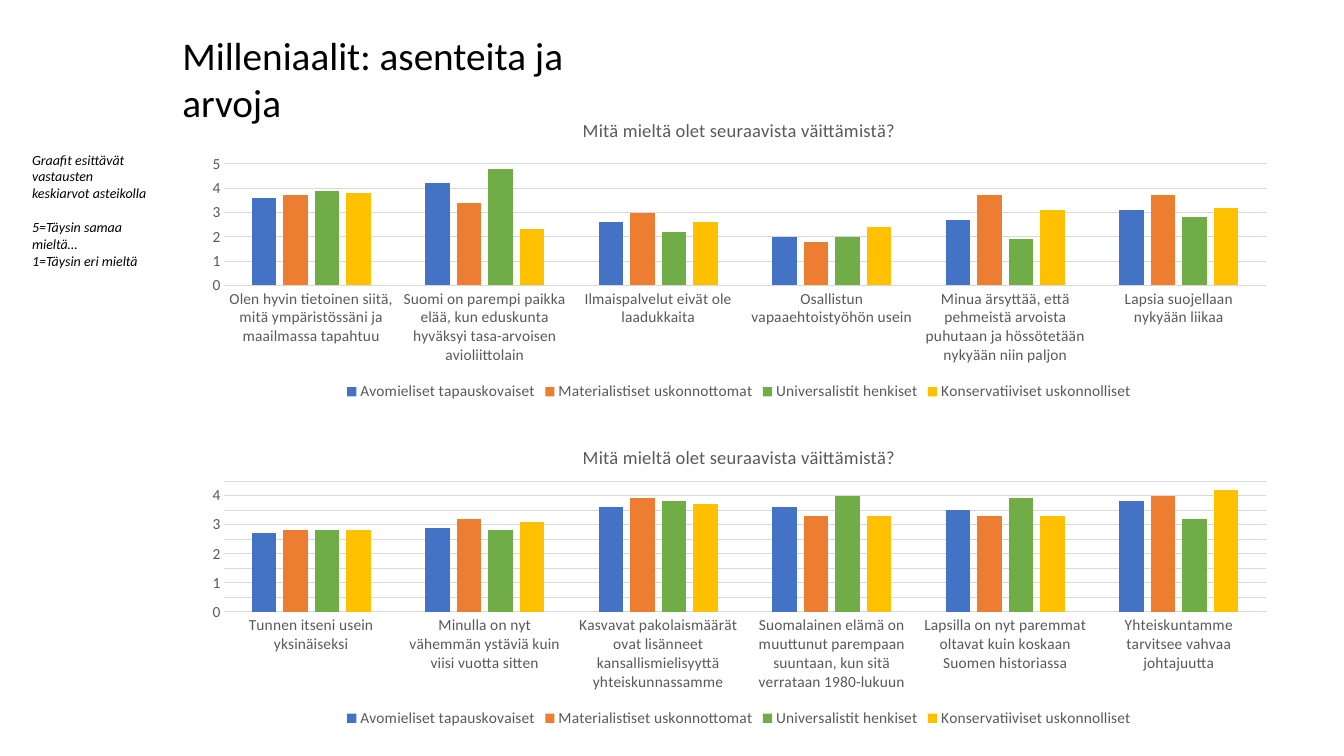
from pptx import Presentation
from pptx.chart.data import CategoryChartData
from pptx.dml.color import RGBColor
from pptx.enum.chart import XL_CHART_TYPE as CT, XL_LEGEND_POSITION as LP, XL_TICK_MARK as TM
from pptx.util import Inches, Pt

FONT = "Calibri"
BLACK = RGBColor(0x00, 0x00, 0x00)
GREY = RGBColor(0x59, 0x59, 0x59)
LINE = RGBColor(0xD9, 0xD9, 0xD9)
BLUE = RGBColor(0x44, 0x72, 0xC4)
ORANGE = RGBColor(0xED, 0x7D, 0x31)
GREEN = RGBColor(0x70, 0xAD, 0x47)
GOLD = RGBColor(0xFF, 0xC0, 0x00)

QUESTION = "Mitä mieltä olet seuraavista väittämistä?"
GROUPS = [
    ("Avomieliset tapauskovaiset", BLUE),
    ("Materialistiset uskonnottomat", ORANGE),
    ("Universalistit henkiset", GREEN),
    ("Konservatiiviset uskonnolliset", GOLD),
]
VALUES_TOP = {
    "Olen hyvin tietoinen siitä, mitä ympäristössäni ja maailmassa tapahtuu": (3.6, 3.7, 3.9, 3.8),
    "Suomi on parempi paikka elää, kun eduskunta hyväksyi tasa-arvoisen avioliittolain":
        (4.2, 3.4, 4.8, 2.3),
    "Ilmaispalvelut eivät ole laadukkaita": (2.6, 3, 2.2, 2.6),
    "Osallistun vapaaehtoistyöhön usein": (2, 1.8, 2, 2.4),
    "Minua ärsyttää, että pehmeistä arvoista puhutaan ja hössötetään nykyään niin paljon":
        (2.7, 3.7, 1.9, 3.1),
    "Lapsia suojellaan nykyään liikaa": (3.1, 3.7, 2.8, 3.2),
}
VALUES_BOTTOM = {
    "Tunnen itseni usein yksinäiseksi": (2.7, 2.8, 2.8, 2.8),
    "Minulla on nyt vähemmän ystäviä kuin viisi vuotta sitten": (2.9, 3.2, 2.8, 3.1),
    "Kasvavat pakolaismäärät ovat lisänneet kansallismielisyyttä yhteiskunnassamme":
        (3.6, 3.9, 3.8, 3.7),
    "Suomalainen elämä on muuttunut parempaan suuntaan, kun sitä verrataan 1980-lukuun":
        (3.6, 3.3, 4, 3.3),
    "Lapsilla on nyt paremmat oltavat kuin koskaan Suomen historiassa": (3.5, 3.3, 3.9, 3.3),
    "Yhteiskuntamme tarvitsee vahvaa johtajuutta": (3.8, 4, 3.2, 4.2),
}


def set_font(font, size, color, italic=False):
    """Give a font the slide's typeface with a size and colour."""
    font.name = FONT
    font.size = Pt(size)
    font.color.rgb = color
    font.bold = False
    font.italic = italic


def add_text(slide, box, paragraphs, size, italic=False):
    """Place a text box; each paragraph is a (text, space before) pair."""
    tf = slide.shapes.add_textbox(*map(Inches, box)).text_frame
    tf.word_wrap = True
    for i, (text, before) in enumerate(paragraphs):
        p = tf.add_paragraph() if i else tf.paragraphs[0]
        if before:
            p.space_before = Pt(before)
        r = p.add_run()
        r.text = text
        set_font(r.font, size, BLACK, italic)


def add_survey_chart(slide, box, values, top, step):
    """Place a clustered column chart of mean answers per statement."""
    data = CategoryChartData()
    data.categories = list(values)
    for (name, _), means in zip(GROUPS, zip(*values.values())):
        data.add_series(name, means)
    chart = slide.shapes.add_chart(CT.COLUMN_CLUSTERED, *map(Inches, box), data).chart
    set_font(chart.font, 11, GREY)

    chart.has_title = True
    tf = chart.chart_title.text_frame
    r = tf.paragraphs[0].add_run()
    r.text = QUESTION
    set_font(r.font, 13.2, GREY)
    chart.chart_title.include_in_layout = False

    chart.has_legend = True
    chart.legend.position = LP.BOTTOM
    chart.legend.include_in_layout = False
    set_font(chart.legend.font, 11, GREY)

    for axis in (chart.category_axis, chart.value_axis):
        axis.major_tick_mark = axis.minor_tick_mark = TM.NONE
        set_font(axis.tick_labels.font, 11, GREY)
    value_axis = chart.value_axis
    value_axis.minimum_scale = 0
    value_axis.maximum_scale = top
    value_axis.major_unit = step
    value_axis.format.line.fill.background()
    for line in (chart.category_axis.format.line, value_axis.major_gridlines.format.line):
        line.color.rgb = LINE
        line.width = Pt(0.75)

    plot = chart.plots[0]
    plot.gap_width = 219
    plot.overlap = -27
    plot.vary_by_categories = False
    for series, (_, color) in zip(plot.series, GROUPS):
        series.format.fill.solid()
        series.format.fill.fore_color.rgb = color


def main():
    """Build the slide and save it."""
    prs = Presentation()
    prs.slide_width, prs.slide_height = Inches(13.33), Inches(7.5)
    s = prs.slides.add_slide(prs.slide_layouts[6])
    add_survey_chart(s, (1.89, 1.02, 10.88, 3), VALUES_TOP, 5, 1)
    add_survey_chart(s, (1.89, 4.26, 10.88, 3), VALUES_BOTTOM, 4.5, 0.5)
    add_text(s, (1.71, 0.26, 5.01, 0.57), [("Milleniaalit: asenteita ja arvoja", 0)], 28)
    add_text(s, (0.22, 1.45, 1.33, 1.28), [
        ("Graafit esittävät vastausten keskiarvot asteikolla", 0),
        ("5=Täysin samaa mieltä…", 12),
        ("1=Täysin eri mieltä", 0),
    ], 10, italic=True)
    prs.save("out.pptx")


if __name__ == "__main__":
    main()
